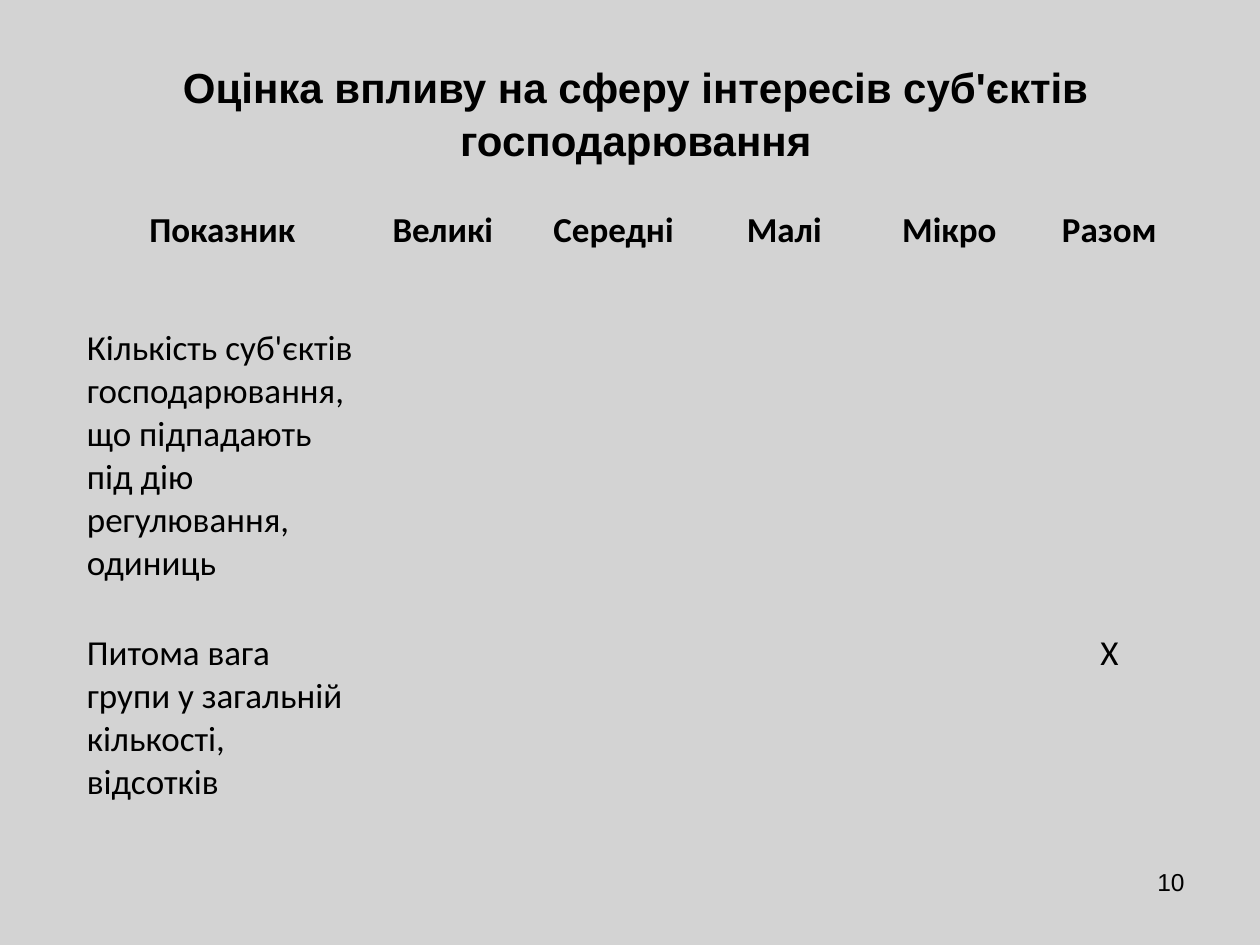
import pptx
import pptx.dml.color
import pptx.enum.text
import pptx.oxml.ns
import pptx.util

BLACK = pptx.dml.color.RGBColor(0x00, 0x00, 0x00)
GREY = pptx.dml.color.RGBColor(0xD3, 0xD3, 0xD3)
PLAIN_TABLE_STYLE = "{2D5ABB26-0587-4C30-8999-92F81FD0307C}"
ALIGN = pptx.enum.text.PP_ALIGN
TOP = pptx.enum.text.MSO_ANCHOR.TOP
Inches = pptx.util.Inches

TITLE_BOX = (1.17, 0.42, 7.75, 0.91)
TABLE_BOX = (0.67, 1.64, 8.75, 4.73)
NUMBER_BOX = (7.17, 6.83, 2.33, 0.52)
COLUMN_WIDTHS = (2.19, 1.31, 1.4, 1.31, 1.31, 1.23)
ROW_HEIGHTS = (0.94, 2.42, 1.35)
ROWS = (
    ("Показник", "Великі", "Середні", "Малі", "Мікро", "Разом"),
    ("Кількість суб'єктів господарювання, що підпадають під дію "
     "регулювання, одиниць", "", "", "", "", ""),
    ("Питома вага групи у загальній кількості, відсотків",
     "", "", "", "", "Х"),
)


def write(text_frame, text, font_name, size, alignment, bold=False):
    """Write one formatted run into the first paragraph of a text frame."""
    text_frame.word_wrap = True
    text_frame.vertical_anchor = TOP
    paragraph = text_frame.paragraphs[0]
    paragraph.alignment = alignment
    run = paragraph.add_run()
    run.text = text
    run.font.name = font_name
    run.font.size = pptx.util.Pt(size)
    run.font.bold = bold
    run.font.color.rgb = BLACK
    return paragraph


def place_title(slide, box):
    """Move the title placeholder into the box and fill it."""
    title = slide.shapes.title
    title.left, title.top, title.width, title.height = map(Inches, box)
    paragraph = write(title.text_frame, "Оцінка впливу на сферу інтересів "
                      "суб'єктів господарювання", "Arial", 24,
                      ALIGN.CENTER, bold=True)
    paragraph.line_spacing = 1.05


def fill_cell(cell, text, alignment, bold):
    """Clear the cell's fill, narrow its margins and write its text."""
    cell.fill.background()
    cell.vertical_anchor = TOP
    cell.margin_left = cell.margin_right = Inches(0.02)
    cell.margin_top = cell.margin_bottom = Inches(0.02)
    if text:
        write(cell.text_frame, text, "Calibri", 20, alignment, bold)


def place_table(slide, box):
    """Add the unlined table of indicators by business size."""
    frame = slide.shapes.add_table(len(ROWS), len(COLUMN_WIDTHS),
                                   *map(Inches, box))
    table = frame.table
    table.first_row = table.horz_banding = False
    style = table._tbl.tblPr.find(pptx.oxml.ns.qn("a:tableStyleId"))
    style.text = PLAIN_TABLE_STYLE
    for column, width in zip(table.columns, COLUMN_WIDTHS):
        column.width = Inches(width)
    for row_index, (row, height) in enumerate(zip(table.rows, ROW_HEIGHTS)):
        row.height = Inches(height)
        is_header = row_index == 0
        for column_index, text in enumerate(ROWS[row_index]):
            is_label = column_index == 0 and not is_header
            alignment = ALIGN.LEFT if is_label else ALIGN.CENTER
            fill_cell(row.cells[column_index], text, alignment, is_header)


def place_number(slide, box):
    """Add the slide number at the right of the box."""
    number = slide.shapes.add_textbox(*map(Inches, box))
    write(number.text_frame, "10", "Arial", 14, ALIGN.RIGHT)


def main():
    """Build and save the presentation."""
    presentation = pptx.Presentation()
    presentation.slide_width = Inches(10)
    presentation.slide_height = Inches(7.5)
    slide = presentation.slides.add_slide(presentation.slide_layouts[5])
    slide.background.fill.solid()
    slide.background.fill.fore_color.rgb = GREY
    place_number(slide, NUMBER_BOX)
    place_title(slide, TITLE_BOX)
    place_table(slide, TABLE_BOX)
    presentation.save("out.pptx")


if __name__ == "__main__":
    main()
